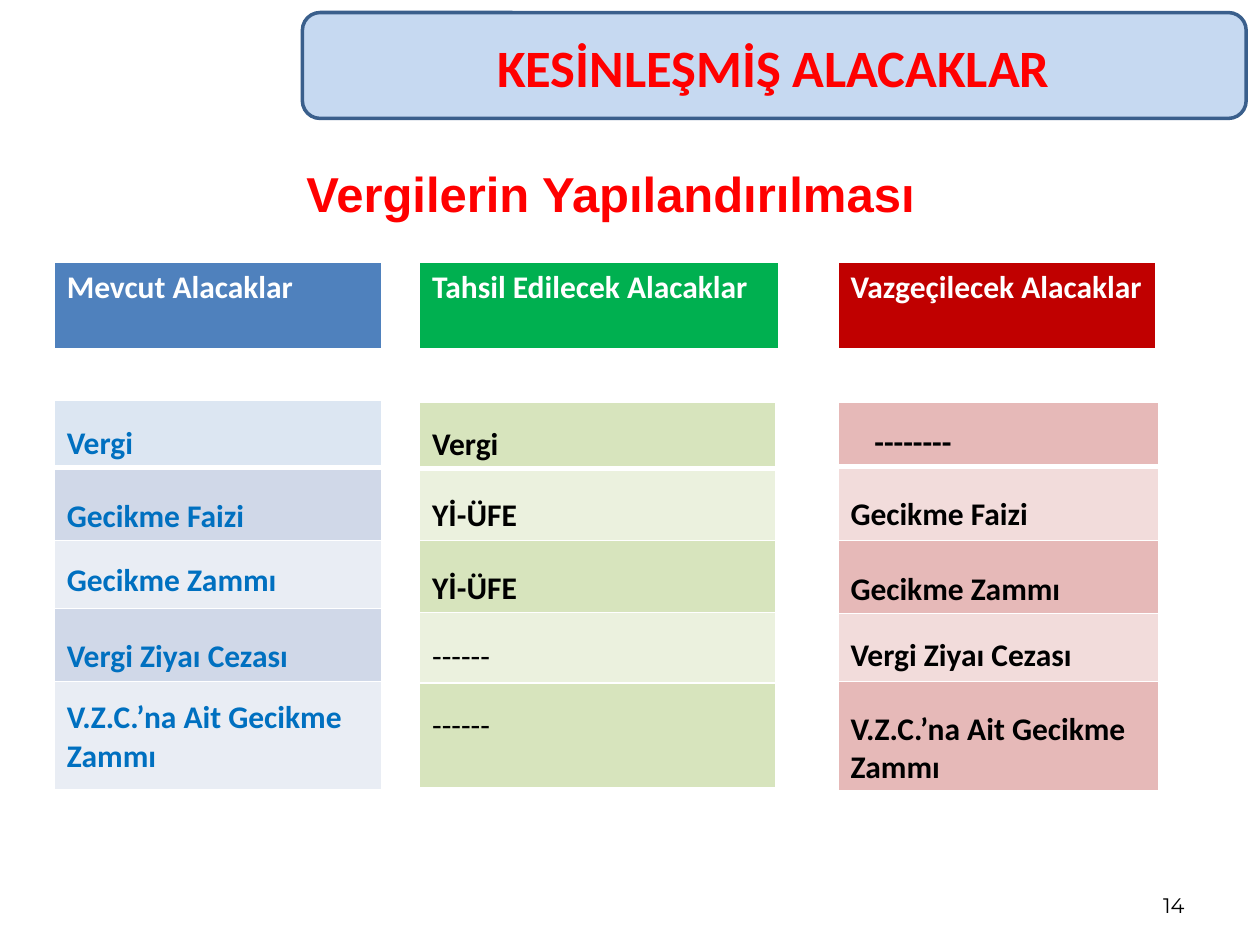
from pptx import Presentation
from pptx.dml.color import RGBColor
from pptx.enum.shapes import MSO_SHAPE as Shape
from pptx.enum.text import MSO_ANCHOR as Anchor, PP_ALIGN as Align
from pptx.oxml import parse_xml
from pptx.oxml.ns import nsdecls
from pptx.util import Inches, Pt

TITLE = "KESİNLEŞMİŞ ALACAKLAR"
SUBTITLE = "Vergilerin Yapılandırılması"
NUMBER = "14"
WHITE, BLACK, RED, BLUE = "FFFFFF", "000000", "FF0000", "0070C0"
HEAD_TOP, HEAD_HIGH = 2.08, 0.7
PAD, SIDE = 0.05, 0.1

GROUPS = [
    dict(head="Mevcut Alacaklar", fill="4F81BD", left=0.43, top=3.18,
         head_wide=2.6, wide=2.6, color=BLUE,
         bands=["DCE6F2", "D0D8E8", "E9EDF4", "D0D8E8", "E9EDF4"],
         rows=[("Vergi", 8, 0.53), ("Gecikme Faizi", 11, 0.58),
               ("Gecikme Zammı", 7, 0.54), ("Vergi Ziyaı Cezası", 10.5, 0.58),
               ("V.Z.C.’na Ait Gecikme Zammı", 5, 0.86)]),
    dict(head="Tahsil Edilecek Alacaklar", fill="00B050", left=3.33, top=3.19,
         head_wide=2.85, wide=2.83, color=BLACK,
         bands=["D7E4BD", "EBF1DE", "D7E4BD", "EBF1DE", "D7E4BD"],
         rows=[("Vergi", 8, 0.53), ("Yİ-ÜFE", 10, 0.57), ("Yİ-ÜFE", 10.5, 0.57),
               ("------", 9, 0.56), ("------", 8, 0.83)]),
    dict(head="Vazgeçilecek Alacaklar", fill="C00000", left=6.65, top=3.19,
         head_wide=2.52, wide=2.55, color=BLACK,
         bands=["E6B9B8", "F2DCDB", "E6B9B8", "F2DCDB", "E6B9B8"],
         rows=[("--------", 7, 0.51), ("Gecikme Faizi", 11, 0.59),
               ("Gecikme Zammı", 11, 0.58), ("Vergi Ziyaı Cezası", 8, 0.54),
               ("V.Z.C.’na Ait Gecikme Zammı", 10.5, 0.87)]),
]


def rgb(code):
    return RGBColor.from_string(code)


def write(frame, text, size=18, font="Calibri", color=BLACK, bold=True,
          align=Align.LEFT, anchor=Anchor.TOP):
    frame.word_wrap = True
    frame.vertical_anchor = anchor
    para = frame.paragraphs[0]
    para.alignment = align
    run = para.add_run()
    run.text = text
    run.font.size = Pt(size)
    run.font.name = font
    run.font.bold = bold
    run.font.color.rgb = rgb(color)


def edge(cell, top, bottom):
    props = cell._tc.get_or_add_tcPr()
    sides = [("lnL", 1), ("lnR", 1), ("lnT", top), ("lnB", bottom)]
    for spot, (side, wide) in enumerate(sides):
        props.insert(spot, parse_xml(
            f'<a:{side} {nsdecls("a")} w="{Pt(wide)}"><a:solidFill>'
            f'<a:srgbClr val="{WHITE}"/></a:solidFill></a:{side}>'))


def grid(left, top, wide, rows, bands, color):
    high = sum(row[2] for row in rows)
    table = slide.shapes.add_table(len(rows), 1, Inches(left), Inches(top),
                                   Inches(wide), Inches(high)).table
    table.first_row = table.horz_banding = False
    for i, ((text, gap, tall), band) in enumerate(zip(rows, bands)):
        table.rows[i].height = Inches(tall)
        cell = table.cell(i, 0)
        cell.fill.solid()
        cell.fill.fore_color.rgb = rgb(band)
        edge(cell, 3 if i == 1 else 1, 3 if i == 0 else 1)
        cell.margin_top = Inches(PAD) + Pt(gap * 1.22)
        cell.margin_bottom = 0
        cell.margin_left = Inches(SIDE + (0.19 if text == "--------" else 0))
        cell.margin_right = Inches(SIDE)
        write(cell.text_frame, text, color=color, bold=text != "------")


def label(left, top, wide, high, text, **style):
    box = slide.shapes.add_textbox(Inches(left), Inches(top),
                                   Inches(wide), Inches(high))
    write(box.text_frame, text, **style)
    return box


deck = Presentation()
deck.slide_width, deck.slide_height = Inches(10), Inches(7.5)
slide = deck.slides.add_slide(deck.slide_layouts[5])

title = slide.shapes.title
title.left, title.top = Inches(2.4), Inches(0.23)
title.width, title.height = Inches(7.48), Inches(0.61)
write(title.text_frame, TITLE, size=30, color=RED, align=Align.CENTER)

banner = slide.shapes.add_shape(Shape.ROUNDED_RECTANGLE, Inches(2.4),
                                Inches(0.1), Inches(7.49), Inches(0.84))
banner.shadow.inherit = False
banner.fill.solid()
banner.fill.fore_color.rgb = rgb("C6D9F1")
banner.line.color.rgb = rgb("3A5F8C")
banner.line.width = Pt(2)
title.element.addprevious(banner.element)

label(7.17, 6.83, 2.33, 0.5, NUMBER, size=12, font="Montserrat", bold=False,
      align=Align.RIGHT, anchor=Anchor.BOTTOM)

for group in GROUPS:
    grid(group["left"], group["top"], group["wide"], group["rows"],
         group["bands"], group["color"])
    grid(group["left"], HEAD_TOP, group["head_wide"],
         [(group["head"], 0, HEAD_HIGH)], [group["fill"]], WHITE)

subtitle = label(0.83, 1.25, 7.95, 0.57, SUBTITLE, size=28, font="Arial",
                 color=RED, align=Align.CENTER)
subtitle.text_frame.margin_left = Inches(0.18)

deck.save("out.pptx")
